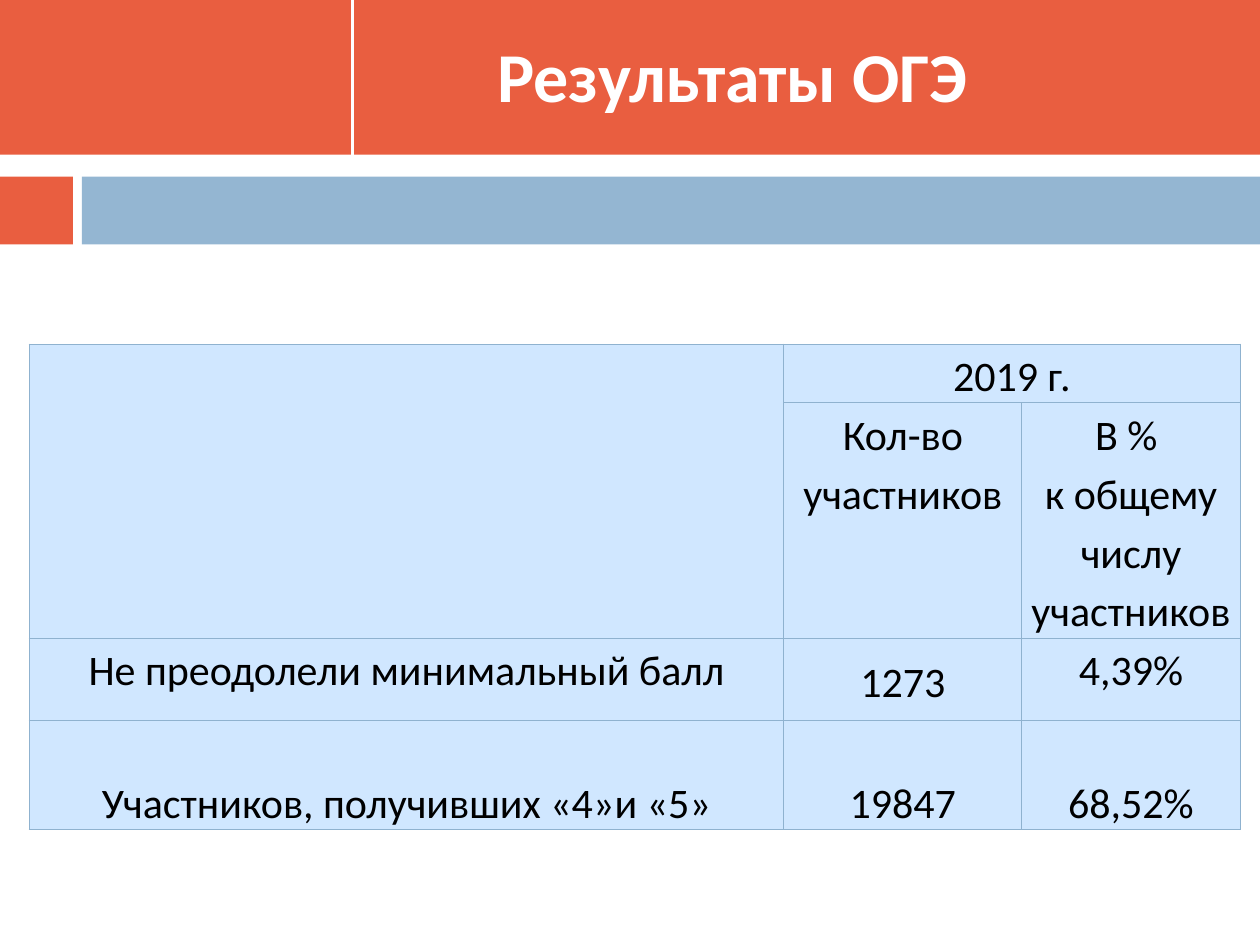
from lxml.etree import SubElement
from pptx import Presentation
from pptx.dml.color import RGBColor
from pptx.enum.shapes import MSO_CONNECTOR as Link, MSO_SHAPE as Shape
from pptx.enum.text import MSO_ANCHOR as Anchor, PP_ALIGN as Align
from pptx.oxml import parse_xml
from pptx.oxml.ns import nsdecls, qn
from pptx.util import Cm, Pt

RED = RGBColor(0xE9, 0x5E, 0x40)
BLUE = RGBColor(0x94, 0xB6, 0xD2)
PALE = RGBColor(0xD0, 0xE7, 0xFF)
EDGE = RGBColor(0x8F, 0xB2, 0xCF)
WHITE = RGBColor(0xFF, 0xFF, 0xFF)
BLACK = RGBColor(0, 0, 0)
FONT = "Calibri"
WIDTH, HEIGHT = 25.4, 19.05

COLS = [15.21, 4.8, 4.4]
ROWS = [1.18, 4.75, 1.65, 2.21]
TOP, MID, LOW = Anchor.TOP, Anchor.MIDDLE, Anchor.BOTTOM
CELLS = [
    [([], TOP), (["2019 г."], TOP), ([], TOP)],
    [([], TOP), (["Кол-во участников"], TOP),
     (["В % ", "к общему числу участников"], TOP)],
    [(["Не преодолели минимальный балл"], TOP), (["1273"], MID), (["4,39%"], TOP)],
    [(["Участников, получивших «4»и «5»"], LOW), (["19847"], LOW), (["68,52%"], LOW)],
]


def add_block(slide, x, y, w, h, color):
    block = slide.shapes.add_shape(Shape.RECTANGLE, Cm(x), Cm(y), Cm(w), Cm(h))
    block.shadow.inherit = False
    block.fill.solid()
    block.fill.fore_color.rgb = color
    block.line.fill.background()


def add_run(para, text, size, color, bold=False):
    para.alignment = Align.CENTER
    run = para.add_run()
    run.text = text
    font = run.font
    font.name, font.size, font.bold = FONT, Pt(size), bold
    font.color.rgb = color


def add_header(slide, x, y, w, h):
    add_block(slide, x, y, w, h, RED)
    split = x + 7.11
    line = slide.shapes.add_connector(
        Link.STRAIGHT, Cm(split), Cm(y), Cm(split), Cm(y + h))
    line.line.color.rgb = WHITE
    line.line.width = Pt(1.5)
    SubElement(line.element.spPr, qn("a:effectLst"))

    box = slide.shapes.add_textbox(Cm(x + 7.7), Cm(y + 0.13), Cm(14.45), Cm(2.74))
    frame = box.text_frame
    frame.word_wrap = True
    frame.vertical_anchor = MID
    add_run(frame.paragraphs[0], "Результаты ОГЭ ", 40, WHITE, True)


def add_band(slide, x, y, w, h):
    add_block(slide, x, y, 1.47, h, RED)
    add_block(slide, x + 1.65, y, w - 1.65, h, BLUE)


def style_cell(cell):
    cell.margin_left = cell.margin_right = Cm(0.17)
    cell.margin_top = cell.margin_bottom = 0
    cell.fill.solid()
    cell.fill.fore_color.rgb = PALE
    props = cell._tc.get_or_add_tcPr()
    for spot, side in enumerate("LRTB"):
        props.insert(spot, parse_xml(
            f'<a:ln{side} {nsdecls("a")} w="{Pt(0.75)}"><a:solidFill>'
            f'<a:srgbClr val="{EDGE}"/></a:solidFill></a:ln{side}>'))


def add_results(slide, x, y):
    table = slide.shapes.add_table(
        len(ROWS), len(COLS), Cm(x), Cm(y), Cm(sum(COLS)), Cm(sum(ROWS))).table
    for col, size in zip(table.columns, COLS):
        col.width = Cm(size)
    for row, size in zip(table.rows, ROWS):
        row.height = Cm(size)
    table.cell(0, 0).merge(table.cell(1, 0))
    table.cell(0, 1).merge(table.cell(0, 2))

    for row, line in zip(table.rows, CELLS):
        for cell, (texts, anchor) in zip(row.cells, line):
            style_cell(cell)
            cell.vertical_anchor = anchor
            frame = cell.text_frame
            for i, text in enumerate(texts):
                para = frame.add_paragraph() if i else frame.paragraphs[0]
                para.line_spacing = 1.15
                add_run(para, text, 24, BLACK)


def main():
    deck = Presentation()
    deck.slide_width, deck.slide_height = Cm(WIDTH), Cm(HEIGHT)
    slide = deck.slides.add_slide(deck.slide_layouts[6])
    add_header(slide, 0, 0, WIDTH, 3.12)
    add_band(slide, 0, 3.56, WIDTH, 1.37)
    add_results(slide, 0.59, 6.94)
    deck.save("out.pptx")


if __name__ == "__main__":
    main()
